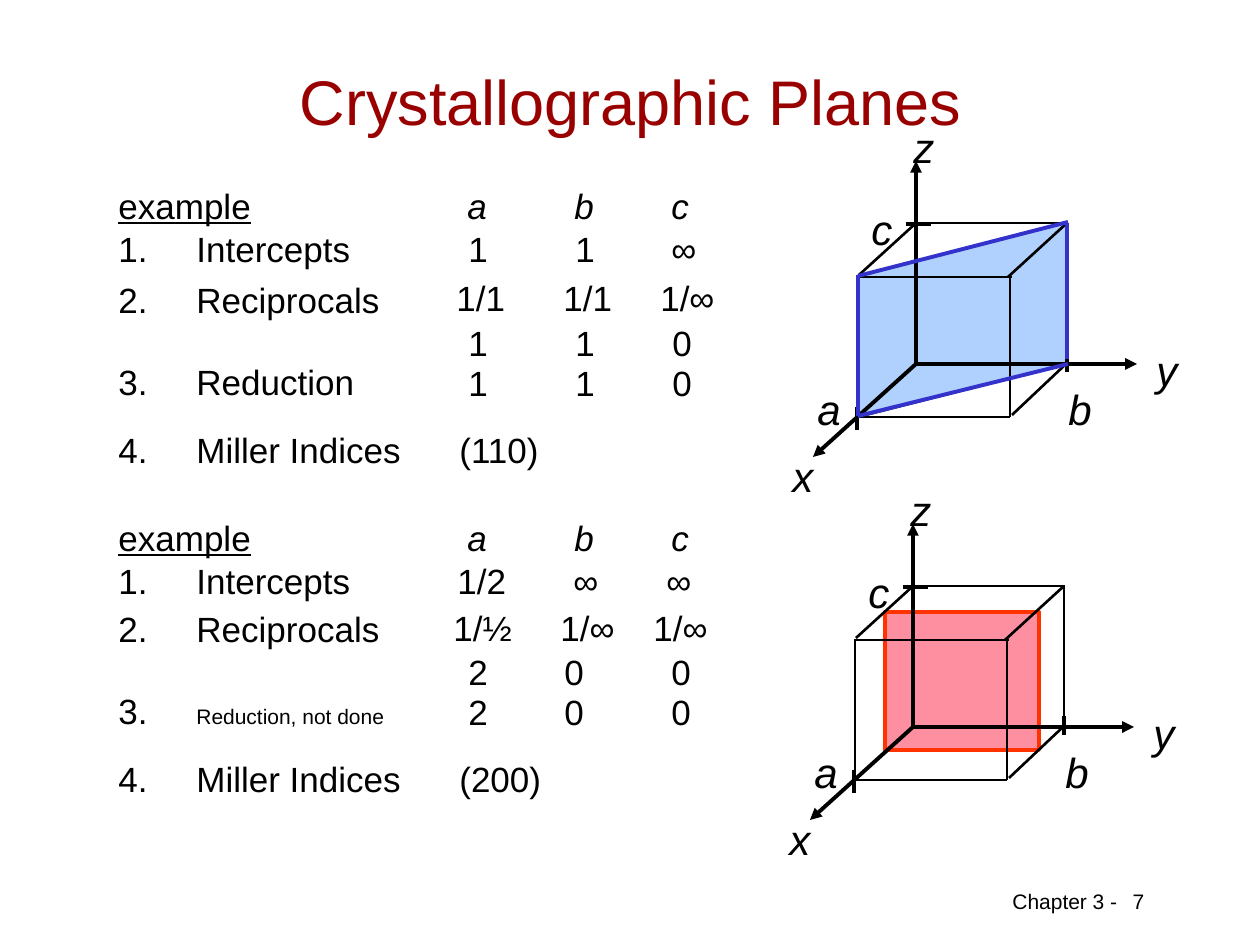
"""Build the Crystallographic Planes slide with two worked Miller index examples."""
from lxml.etree import SubElement
from pptx import Presentation
from pptx.dml.color import RGBColor
from pptx.enum.shapes import MSO_CONNECTOR as CONNECTOR, MSO_SHAPE as SHAPE
from pptx.enum.text import MSO_ANCHOR as ANCHOR, PP_ALIGN as ALIGN
from pptx.oxml.ns import qn
from pptx.util import Pt

SCALE = 914400 / 126
BLACK = RGBColor(0x00, 0x00, 0x00)
DARK_RED = RGBColor(0x99, 0x00, 0x00)
BLUE = RGBColor(0x33, 0x33, 0xCC)
LIGHT_BLUE = RGBColor(0xB0, 0xD1, 0xFE)
ORANGE = RGBColor(0xFF, 0x33, 0x00)
PINK = RGBColor(0xFD, 0x8F, 0xA1)

LABEL_LEFT, LABEL_TAB, MILLER_TAB = 106, 78, 341
INSET = 13
ROW_HEIGHT = 54

AXES = [(916, 161), (1137, 364), (813, 457)]
TICKS = [(1067, 372, 1067, 353), (857, 430, 857, 407), (906, 224, 931, 224)]
EDGES = [
    (916, 223, 1068, 223), (915, 224, 859, 275), (858, 417, 858, 276),
    (1066, 364, 1012, 415), (856, 417, 1010, 417), (859, 277, 1012, 277),
    (1067, 223, 1008, 277), (1010, 417, 1010, 277),
]
RIGHT_EDGE = (1067, 359, 1067, 223)
AXIS_LABELS = [("z", 901, 115), ("x", 780, 444), ("y", 1144, 338),
               ("a", 805, 377), ("b", 1056, 377), ("c", 859, 197)]
PLANE_110 = [(858, 418), (858, 276), (1066, 222), (1066, 365)]
PLANE_110_EDGES = [(858, 276, 1068, 222), (858, 416, 1068, 364), (858, 275, 858, 416)]

EXAMPLES = [
    {
        "heading_top": 178,
        "labels": [("1.\tIntercepts", "", 221), ("2.\tReciprocals", "", 272),
                   ("3.\tReduction", "", 354), ("4.\tMiller Indices\t(110)", "", 422)],
        "values": [("1\t1\t∞", 221, (469, 576, 672)), ("1/1\t1/1\t1/∞", 270, (457, 564, 661)),
                   ("1\t1\t0", 315, (469, 576, 673)), ("1\t1\t0", 355, (469, 576, 673))],
    },
    {
        "heading_top": 510,
        "labels": [("1.\tIntercepts", "", 553), ("2.\tReciprocals", "", 601),
                   ("3.\t", "Reduction, not done", 683), ("4.\tMiller Indices\t(200)", "", 751)],
        "values": [("1/2\t∞\t∞", 553, (458, 574, 667)), ("1/½\t1/∞\t1/∞", 600, (454, 561, 654)),
                   ("2\t0\t0", 644, (469, 565, 672)), ("2\t0\t0", 684, (469, 565, 672))],
    },
]


def emu(pixels):
    """Turn px into EMU."""
    return round(pixels * SCALE)


class SlideBuilder:
    """Holds the style and the current slide."""

    font_name = "Arial"

    def __init__(self, presentation):
        self.slide = presentation.slides.add_slide(presentation.slide_layouts[6])
        self.shapes = self.slide.shapes

    def text(self, content, left, top, width, height=ROW_HEIGHT, size=20, color=BLACK,
             align=ALIGN.LEFT, italic=False, underline=False, tabs=(), small="",
             anchor=ANCHOR.TOP):
        """Add a text box, with an optional smaller run at its end."""
        box = self.shapes.add_textbox(emu(left), emu(top), emu(width), emu(height))
        frame = box.text_frame
        frame.word_wrap = True
        frame.vertical_anchor = anchor
        paragraph = frame.paragraphs[0]
        paragraph.text = content
        paragraph.alignment = align
        if tabs:
            tab_list = SubElement(paragraph._p.get_or_add_pPr(), qn("a:tabLst"))
            for position in tabs:
                SubElement(tab_list, qn("a:tab"), pos=str(emu(position)), algn="l")
        if small:
            paragraph.add_run().text = small
        for run in paragraph.runs:
            font = run.font
            font.name = self.font_name
            font.size = Pt(12 if run.text == small else size)
            font.color.rgb = color
            font.italic = italic
            font.underline = underline

    def line(self, start_x, start_y, end_x, end_y, width=1.5, color=BLACK, arrow=False):
        """Add a straight line, with an arrowhead at its end if asked."""
        connector = self.shapes.add_connector(
            CONNECTOR.STRAIGHT, emu(start_x), emu(start_y), emu(end_x), emu(end_y))
        connector.line.width = Pt(width)
        connector.line.color.rgb = color
        if arrow:
            SubElement(connector.line._get_or_add_ln(), qn("a:tailEnd"), type="triangle")
        SubElement(connector._element.spPr, qn("a:effectLst"))

    def paint(self, shape, fill, color, width):
        """Set the fill and outline of a shape."""
        shape.shadow.inherit = False
        shape.fill.solid()
        shape.fill.fore_color.rgb = fill
        shape.line.color.rgb = color
        shape.line.width = Pt(width)

    def polygon(self, points, fill, color, width):
        """Add a closed outline."""
        builder = self.shapes.build_freeform(*points[0], scale=SCALE)
        builder.add_line_segments(points[1:], close=True)
        self.paint(builder.convert_to_shape(), fill, color, width)

    def rectangle(self, left, top, width, height, fill, color, line_width):
        """Add a rectangle."""
        shape = self.shapes.add_shape(
            SHAPE.RECTANGLE, emu(left), emu(top), emu(width), emu(height))
        self.paint(shape, fill, color, line_width)

    def unit_cell(self, shift_x, shift_y, right_color, right_width):
        """Add the cube with its axes, ticks and labels."""
        def moved(line):
            return (line[0] + shift_x, line[1] + shift_y, line[2] + shift_x, line[3] + shift_y)

        for end in AXES:
            self.line(*moved((916, 364) + end), width=2.25, arrow=True)
        for tick in TICKS:
            self.line(*moved(tick), width=2.25)
        for edge in EDGES:
            self.line(*moved(edge))
        self.line(*moved(RIGHT_EDGE), width=right_width, color=right_color)
        for name, left, top in AXIS_LABELS:
            self.text(name, left + shift_x, top + shift_y, 42, 63, size=24,
                      align=ALIGN.CENTER, italic=True)

    def value_row(self, content, top, columns, italic=False):
        """Add one row of values whose columns start at the given places."""
        first = columns[0]
        self.text(content, first - INSET, top, 290, italic=italic,
                  tabs=[column - first for column in columns[1:]])

    def example(self, heading_top, labels, values):
        """Add the steps and values of one worked example."""
        self.text("example", LABEL_LEFT, heading_top, 202, underline=True)
        self.value_row("a\tb\tc", heading_top, (468, 575, 672), italic=True)
        for content, small, top in labels:
            self.text(content, LABEL_LEFT, top, 580 if "Miller" in content else 321,
                      tabs=(LABEL_TAB, MILLER_TAB), small=small)
        for content, top, columns in values:
            self.value_row(content, top, columns)


def main():
    """Build and save the slide."""
    presentation = Presentation()
    presentation.slide_width = emu(1260)
    presentation.slide_height = emu(945)
    builder = SlideBuilder(presentation)

    builder.text("Chapter 3 -", 1000, 882, 130, 38, size=12)
    builder.text("7", 1057, 882, 163, 49, size=12, align=ALIGN.CENTER)
    builder.text("Crystallographic Planes", 53, 53, 1155, 94, size=36, color=DARK_RED,
                 align=ALIGN.CENTER, anchor=ANCHOR.MIDDLE)

    builder.polygon(PLANE_110, LIGHT_BLUE, BLACK, 0.25)
    builder.unit_cell(0, 0, BLUE, 2.25)
    for edge in PLANE_110_EDGES:
        builder.line(*edge, width=2.25, color=BLUE)

    builder.rectangle(885, 612, 154, 138, PINK, ORANGE, 2.25)
    builder.unit_cell(-3, 363, BLACK, 1.5)

    for example in EXAMPLES:
        builder.example(**example)
    presentation.save("out.pptx")


if __name__ == "__main__":
    main()
